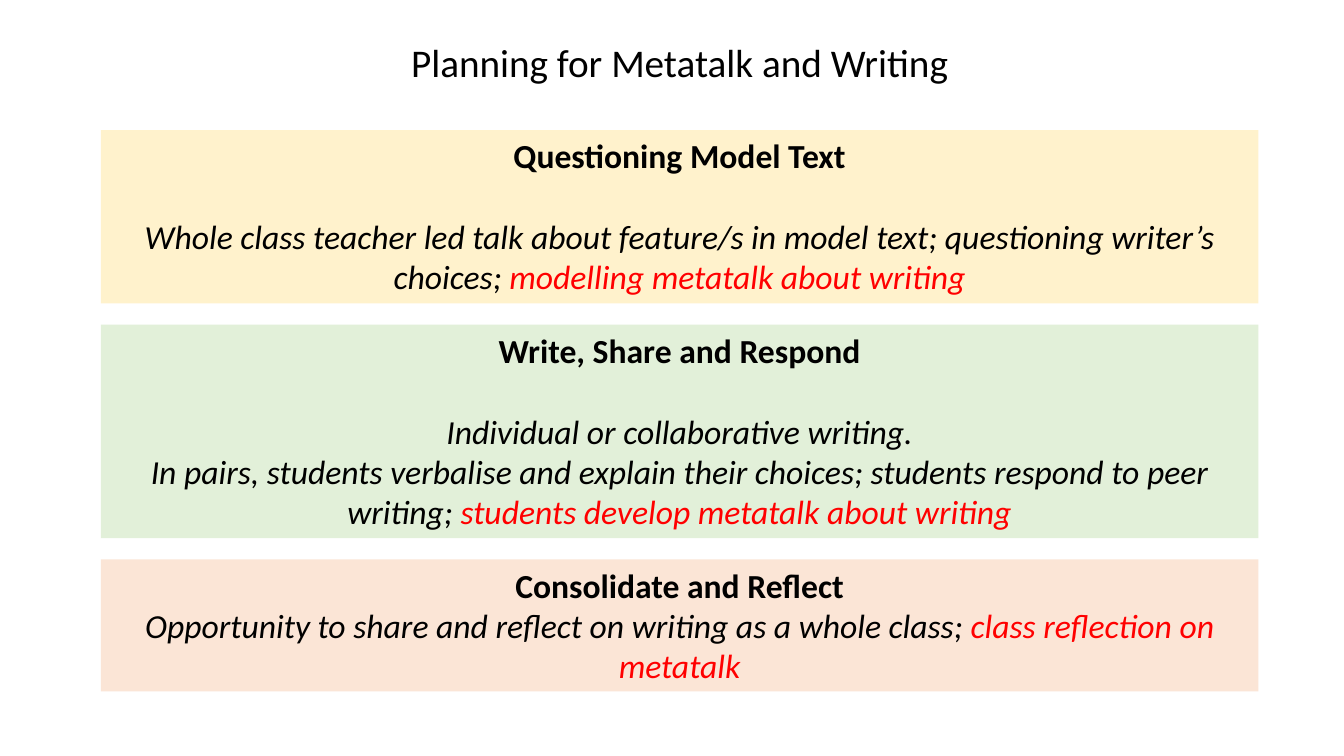
from pptx import Presentation
from pptx.dml.color import RGBColor
from pptx.enum.shapes import MSO_SHAPE
from pptx.enum.text import MSO_ANCHOR, PP_ALIGN
from pptx.util import Inches, Pt

RECT = MSO_SHAPE.RECTANGLE
TOP = MSO_ANCHOR.TOP
CENTER = PP_ALIGN.CENTER

FONT = "Calibri"
COLORS = {
    "text": "000000",
    "metatalk": "FF0000",
    "question": "FFF2CC",
    "write": "E2F0D9",
    "reflect": "FBE5D6",
}

PANEL_LEFT, PANEL_WIDTH = 1, 11.48
FIRST_TOP, GAP = 1.29, 0.21
HEADING_GAP = 29

STAGES = [
    ("question", 1.72, "Questioning Model Text", HEADING_GAP, [
        ("Whole class teacher led talk about feature/s in model text; "
         "questioning writer’s choices; ",
         "modelling metatalk about writing"),
    ]),
    ("write", 2.12, "Write, Share and Respond", HEADING_GAP, [
        ("Individual or collaborative writing.", ""),
        ("In pairs, students verbalise and explain their choices; "
         "students respond to peer writing; ",
         "students develop metatalk about writing"),
    ]),
    ("reflect", 1.31, "Consolidate and Reflect", 0, [
        ("Opportunity to share and reflect on writing as a whole class; ",
         "class reflection on metatalk"),
    ]),
]


def add_run(p, text, size=24, color="text", bold=False, italic=False):
    r = p.add_run()
    r.text = text
    r.font.name = FONT
    r.font.size = Pt(size)
    r.font.bold = bold
    r.font.italic = italic
    r.font.color.rgb = RGBColor.from_string(COLORS[color])


def add_title(s, text):
    sp = s.shapes.add_textbox(Inches(3.12), Inches(0.33), Inches(7.24), Inches(0.57))
    tf = sp.text_frame
    tf.word_wrap = True
    p = tf.paragraphs[0]
    p.alignment = CENTER
    add_run(p, text, size=28)


def add_panel(s, top, fill, height, heading, heading_gap, lines):
    sp = s.shapes.add_shape(RECT, Inches(PANEL_LEFT), Inches(top),
                            Inches(PANEL_WIDTH), Inches(height))
    sp.shadow.inherit = False
    sp.fill.solid()
    sp.fill.fore_color.rgb = RGBColor.from_string(COLORS[fill])
    sp.line.fill.background()
    tf = sp.text_frame
    tf.word_wrap = True
    tf.vertical_anchor = TOP
    p = tf.paragraphs[0]
    p.alignment = CENTER
    p.space_after = Pt(heading_gap)
    add_run(p, heading, bold=True)
    for activity, metatalk in lines:
        p = tf.add_paragraph()
        p.alignment = CENTER
        add_run(p, activity, italic=True)
        if metatalk:
            add_run(p, metatalk, color="metatalk", italic=True)


def main():
    prs = Presentation()
    prs.slide_width = Inches(13.33)
    prs.slide_height = Inches(7.5)
    s = prs.slides.add_slide(prs.slide_layouts[6])
    top = FIRST_TOP
    for fill, height, heading, heading_gap, lines in STAGES:
        add_panel(s, top, fill, height, heading, heading_gap, lines)
        top += height + GAP
    add_title(s, "Planning for Metatalk and Writing")
    prs.save("out.pptx")


if __name__ == "__main__":
    main()
